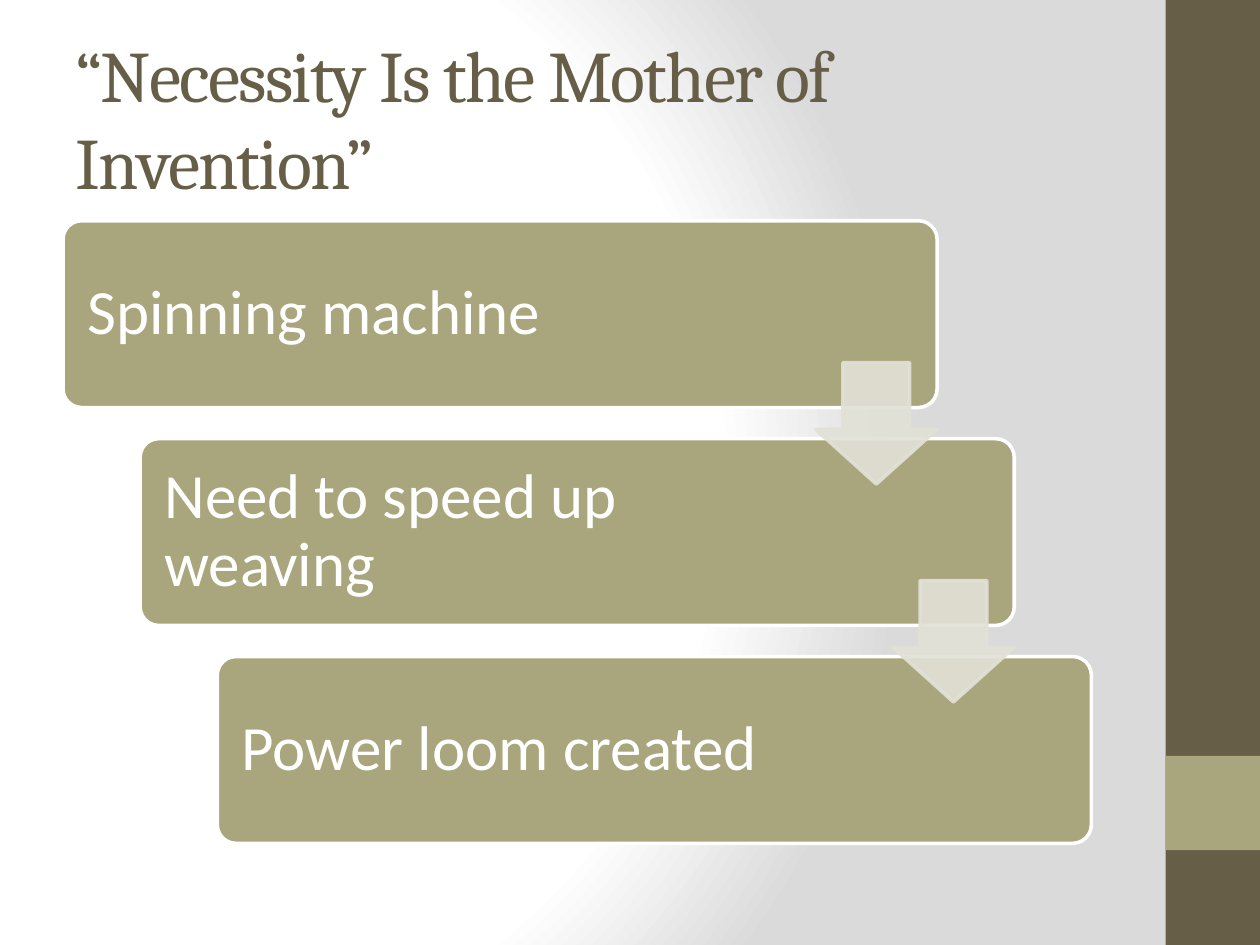
from dataclasses import dataclass

from lxml import etree
from pptx import Presentation
from pptx.dml.color import RGBColor as Rgb
from pptx.enum import shapes as sh, text as tx
from pptx.oxml import ns, parse_xml
from pptx.util import Cm, Pt


@dataclass(frozen=True)
class Theme:
    dark: str = "675E47"
    olive: str = "A9A57C"
    pale: str = "E2E1D7"
    white: str = "FFFFFF"
    grey: str = "DADADA"
    head: str = "Cambria"
    body: str = "Calibri"
    big: float = 41.4
    mid: float = 36
    rule: float = 2


T = Theme()
KIND = sh.MSO_SHAPE
STEPS = ["Spinning machine", "Need to speed up weaving", "Power loom created"]


def draw(host, kind, box, fill, line=None, adj=()):
    """Add a flat preset shape; box is left, top, width, height in cm."""
    part = host.add_shape(kind, *map(Cm, box))
    part.shadow.inherit = False
    part.fill.solid()
    part.fill.fore_color.rgb = Rgb.from_string(fill)
    if line:
        part.line.color.rgb = Rgb.from_string(line)
        part.line.width = Pt(T.rule)
    else:
        part.line.fill.background()
    for i, value in enumerate(adj):
        part.adjustments[i] = value
    return part


def write(host, box, words, face, size, color, inset=None):
    """Add a wrapped, vertically centred line of text."""
    frame = host.add_textbox(*map(Cm, box)).text_frame
    frame.word_wrap = True
    frame.vertical_anchor = tx.MSO_ANCHOR.MIDDLE
    if inset is not None:
        frame.margin_left = frame.margin_right = Cm(inset)
        frame.margin_top = frame.margin_bottom = Cm(inset)
    para = frame.paragraphs[0]
    para.text = words
    para.font.name = face
    para.font.size = Pt(size)
    para.font.color.rgb = Rgb.from_string(color)
    return para


def fade(part, share):
    """Make fill and line partly clear."""
    for color in part.element.spPr.iter(ns.qn("a:srgbClr")):
        etree.SubElement(color, ns.qn("a:alpha"), val=str(share * 1000))


def backdrop(slide):
    """Circular gradient from white to grey."""
    slide.background.fill.gradient()
    old = next(slide.element.iter(ns.qn("a:gradFill")))
    stops = [(0, T.white), (75, T.white), (100, T.grey)]
    marks = "".join(
        f'<a:gs pos="{pos * 1000}"><a:srgbClr val="{color}"/></a:gs>'
        for pos, color in stops
    )
    new = parse_xml(
        f'<a:gradFill {ns.nsdecls("a")} rotWithShape="1">'
        f'<a:gsLst>{marks}</a:gsLst><a:path path="circle">'
        '<a:fillToRect l="20000" t="50000" r="100000" b="50000"/>'
        "</a:path></a:gradFill>"
    )
    old.getparent().replace(old, new)


def sidebar(slide, left, top, wide, high):
    """Dark band with a square accent."""
    draw(slide.shapes, KIND.RECTANGLE, (left, top, wide, high), T.dark)
    spot = (left, top + 0.8 * high, wide, wide)
    draw(slide.shapes, KIND.RECTANGLE, spot, T.olive)


def title(slide, *box):
    words = "“Necessity Is the Mother of Invention”"
    para = write(slide.shapes, box, words, T.head, T.big, T.dark)
    para.runs[0].font._element.set("spc", "-100")


def cascade(slide, left, top, wide, high):
    """Stepped cards joined by arrows."""
    group = slide.shapes.add_group_shape().shapes
    card_w, card_h = 0.85 * wide, 0.3 * high
    count = len(STEPS)
    dx, dy = (wide - card_w) / (count - 1), (high - card_h) / (count - 1)
    spots = [(left + i * dx, top + i * dy) for i in range(count)]
    pad, size = 0.11, 0.65 * card_h

    # Cards and their text
    for i, ((x, y), words) in enumerate(zip(spots, STEPS)):
        draw(group, KIND.ROUNDED_RECTANGLE, (x, y, card_w, card_h),
             T.olive, T.white, [0.1])
        text_w = 13.41 if i else 13.56
        para = write(group, (x + pad, y + pad, text_w, card_h - 2 * pad),
                     words, T.body, T.mid, T.white, 0.38)
        para.line_spacing = 0.9

    # Arrows, flush with the right edge of the card above
    for x, y in spots[:-1]:
        box = (x + card_w - size, y + 0.76 * card_h, size, size)
        arrow = draw(group, KIND.DOWN_ARROW, box, T.pale, T.pale)
        # The preset lists shaft width second
        arrow.adjustments[0], arrow.adjustments[1] = 0.55, 0.45
        fade(arrow, 90)


def main():
    deck = Presentation()
    deck.slide_width, deck.slide_height = Cm(25.4), Cm(19.05)
    slide = deck.slides.add_slide(deck.slide_layouts[6])
    backdrop(slide)
    sidebar(slide, 23.5, 0, 1.9, 19.05)
    title(slide, 1.27, 0.76, 21.16, 3.18)
    cascade(slide, 1.27, 4.45, 20.73, 12.55)
    deck.save("out.pptx")


if __name__ == "__main__":
    main()
